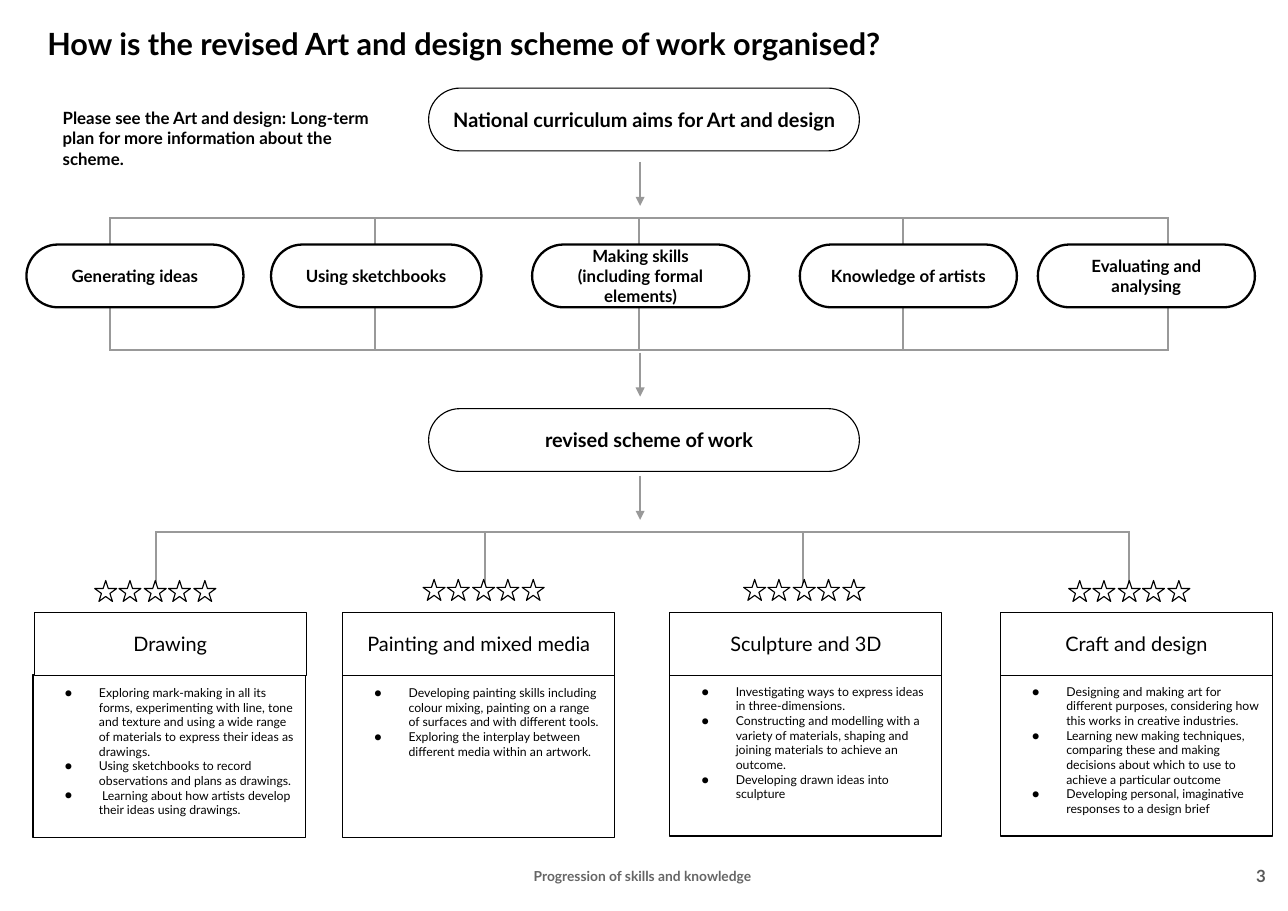
from lxml import etree
from pptx import Presentation, util as u
from pptx.dml.color import RGBColor
from pptx.enum import shapes, text
from pptx.oxml.ns import qn

PX = 9144  # 100 px to the inch
THEME = {
    "font": "Lato",
    "ink": RGBColor(0, 0, 0),
    "paper": RGBColor(255, 255, 255),
    "rule": RGBColor(0x99, 0x99, 0x99),
    "thin": u.Pt(0.75),
    "thick": u.Pt(1.5),
    # size, bold, colour
    "title": (20, True, RGBColor(0, 0, 0)),
    "level": (13, True, RGBColor(0, 0, 0)),
    "label": (11, True, RGBColor(0, 0, 0)),
    "heading": (13, False, RGBColor(0, 0, 0)),
    "detail": (8, False, RGBColor(0, 0, 0)),
    "footer": (9, True, RGBColor(0x66, 0x66, 0x66)),
    "number": (11, True, RGBColor(0x59, 0x59, 0x59)),
}
KIND = shapes.MSO_SHAPE
LEFT, CENTER, RIGHT = text.PP_ALIGN.LEFT, text.PP_ALIGN.CENTER, text.PP_ALIGN.RIGHT
TOP, MIDDLE = text.MSO_ANCHOR.TOP, text.MSO_ANCHOR.MIDDLE

deck = Presentation()
deck.slide_width, deck.slide_height = 1169 * PX, 827 * PX
page = deck.slides.add_slide(deck.slide_layouts[6])


def add_box(kind, bounds, weight=THEME["thin"]):
    """Add a white, outlined shape; without a kind, add a text box."""
    bounds = [value * PX for value in bounds]
    if kind is None:
        return page.shapes.add_textbox(*bounds)
    box = page.shapes.add_shape(kind, *bounds)
    box.shadow.inherit = False
    box.fill.solid()
    box.fill.fore_color.rgb = THEME["paper"]
    box.line.color.rgb = THEME["ink"]
    box.line.width = weight
    if kind == KIND.ROUNDED_RECTANGLE:
        box.adjustments[0] = 0.5
    return box


def write(box, lines, style, align=CENTER, anchor=MIDDLE, inset=12):
    """Fill a box with one paragraph per line and return the paragraphs."""
    size, bold, color = THEME[style]
    frame = box.text_frame
    frame.word_wrap = True
    frame.vertical_anchor = anchor
    frame.margin_left = frame.margin_right = inset * PX
    frame.margin_top = frame.margin_bottom = inset * PX
    for index, line in enumerate(lines):
        para = frame.add_paragraph() if index else frame.paragraphs[0]
        para.alignment = align
        span = para.add_run()
        span.text = line
        span.font.name = THEME["font"]
        span.font.size = u.Pt(size)
        span.font.bold = bold
        span.font.color.rgb = color
    return frame.paragraphs


# Bracket tables: left, top, row height, column widths, top and bottom border
brackets = [
    (100, 267, 42, [240] * 4, "paper", "rule"),
    (100, 198, 49, [240] * 4, "rule", "paper"),
    (142, 483, 32, [298, 289, 296], "rule", None),
]
for left, top, height, widths, upper, lower in brackets:
    bracket = page.shapes.add_table(
        1, len(widths), left * PX, top * PX, sum(widths) * PX, height * PX).table
    bracket.first_row = bracket.horz_banding = False
    for column, width in zip(bracket.columns, widths):
        column.width = width * PX
    for cell in bracket.iter_cells():
        cell.margin_top = cell.margin_bottom = 10 * PX
        borders = {"a:lnL": "rule", "a:lnR": "rule", "a:lnT": upper, "a:lnB": lower}
        for side, shade in borders.items():
            border = etree.SubElement(
                cell._tc.get_or_add_tcPr(), qn(side), w=str(THEME["thick"]))
            if shade:
                fill = etree.SubElement(border, qn("a:solidFill"))
                etree.SubElement(fill, qn("a:srgbClr"), val=str(THEME[shade]))
            else:
                etree.SubElement(border, qn("a:noFill"))
        cell.fill.background()

# Arrows down the middle
for top in (147, 320, 432):
    arrow = page.shapes.add_connector(
        shapes.MSO_CONNECTOR.STRAIGHT, 581 * PX, top * PX, 581 * PX, (top + 40) * PX)
    arrow.line.color.rgb = THEME["rule"]
    arrow.line.width = THEME["thick"]
    properties = arrow.element.spPr
    etree.SubElement(properties.find(qn("a:ln")), qn("a:tailEnd"), type="triangle")
    etree.SubElement(properties, qn("a:effectLst"))

# Title, note and footer
title = write(add_box(None, (30, 7, 1109, 75)),
              ["How is the revised Art and design scheme of work organised?"],
              "title", LEFT, TOP, 13)
title[0].line_spacing = 1.08
write(add_box(None, (47, 88, 315, 76)),
      ["Please see the Art and design: Long-term plan for more information about the scheme."],
      "label", LEFT, TOP, 10)
footer = write(add_box(None, (419, 777, 328, 35)),
               ["Progression of skills and knowledge"], "footer", CENTER, TOP, 10)
footer[0].line_spacing = 1.15
write(add_box(None, (1092, 764, 70, 63)), ["3"], "number", RIGHT, MIDDLE, 13)

# Curriculum aims and scheme
aims = add_box(KIND.ROUNDED_RECTANGLE, (389, 80, 391, 57))
write(aims, ["National curriculum aims for Art and design"], "level")
scheme = add_box(KIND.ROUNDED_RECTANGLE, (389, 371, 391, 57))
write(scheme, ["revised scheme of work"], "level")
scheme.text_frame.margin_left = 21 * PX

# Skill strands
strands = [
    (24, 197, "Generating ideas"),
    (246, 191, "Using sketchbooks"),
    (483, 197, "Making skills (including formal elements)"),
    (726, 197, "Knowledge of artists"),
    (942, 197, "Evaluating and analysing"),
]
for left, width, name in strands:
    pill = add_box(KIND.ROUNDED_RECTANGLE, (left, 222, width, 57), THEME["thick"])
    write(pill, [name], "label")

# Units: heading left, body left, body top, first star left, star top, heading, details
units = [
    (31, 30, 612, 86, 527, "Drawing", [
        "Exploring mark-making in all its forms, experimenting with line, tone and texture "
        "and using a wide range of materials to express their ideas as drawings.",
        "Using sketchbooks to record observations and plans as drawings.",
        " Learning about how artists develop their ideas using drawings."]),
    (311, 311, 612, 384, 526, "Painting and mixed media", [
        "Developing painting skills including colour mixing, painting on a range of surfaces "
        "and with different tools.",
        "Exploring the interplay between different media within an artwork."]),
    (608, 608, 611, 675, 526, "Sculpture and 3D", [
        "Investigating ways to express ideas in three-dimensions.",
        "Constructing and modelling with a variety of materials, shaping and joining "
        "materials to achieve an outcome.",
        "Developing drawn ideas into sculpture"]),
    (908, 908, 611, 970, 527, "Craft and design", [
        "Designing and making art for different purposes, considering how this works in "
        "creative industries.",
        "Learning new making techniques, comparing these and making decisions about which "
        "to use to achieve a particular outcome",
        "Developing personal, imaginative responses to a design brief"]),
]
for left, body_left, body_top, star_left, star_top, name, details in units:
    body = add_box(KIND.RECTANGLE, (body_left, body_top, 247, 148))
    for para in write(body, details, "detail", LEFT, TOP, 10):
        layout = para._p.get_or_add_pPr()
        layout.set("marL", str(50 * PX))
        layout.set("indent", str(-31 * PX))
        etree.SubElement(layout, qn("a:buSzPts"), val="800")
        etree.SubElement(layout, qn("a:buFont"), typeface=THEME["font"])
        etree.SubElement(layout, qn("a:buChar"), char="●")
    heading = add_box(KIND.RECTANGLE, (left, 556, 247, 57))
    write(heading, [name], "heading")
    for star in range(5):
        add_box(KIND.STAR_5_POINT, (star_left + star * 45 // 2, star_top, 20, 19))

deck.save("out.pptx")
